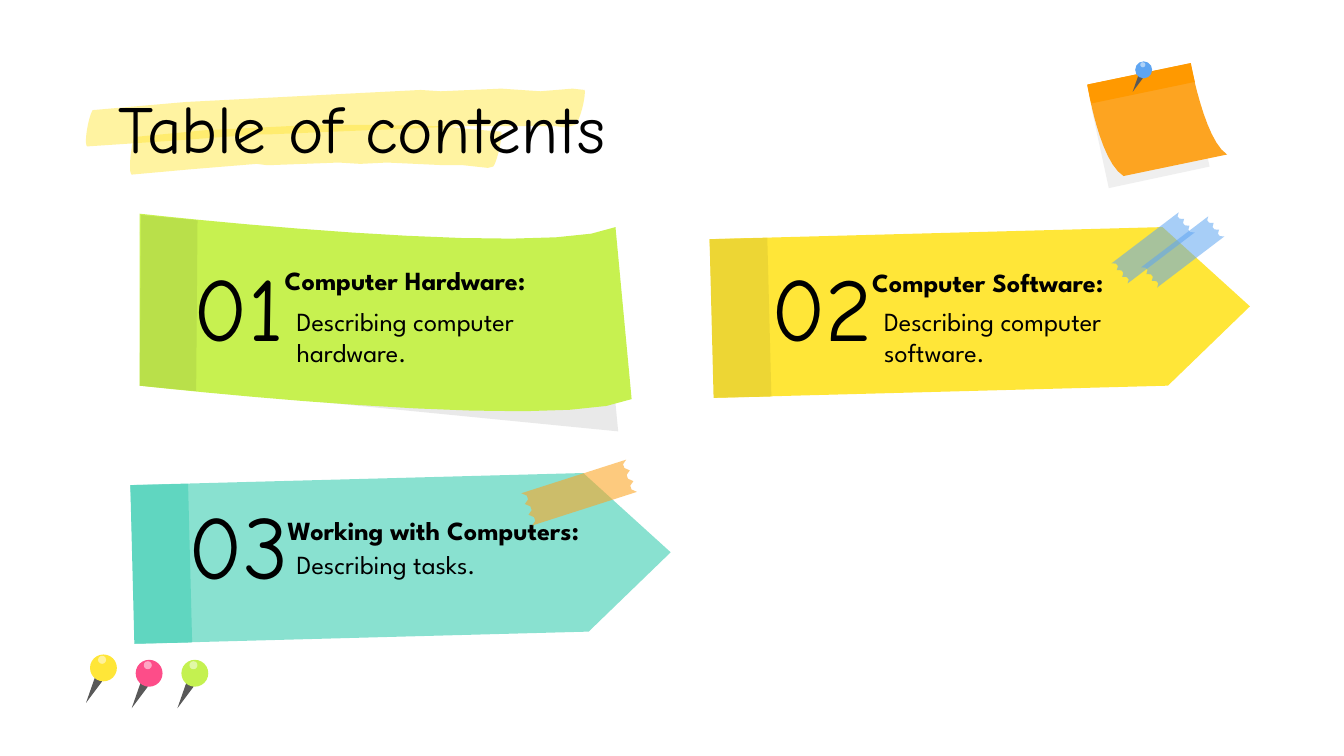
from dataclasses import dataclass

from lxml import etree
from pptx import Presentation
from pptx import util as u
from pptx.dml.color import RGBColor
from pptx.enum import shapes, text
from pptx.oxml.ns import qn


@dataclass(frozen=True)
class Theme:
    hand: str = "Comic Neue"
    sans: str = "League Spartan"
    title: int = 36
    number: int = 48
    body: int = 14
    ink: str = "000000"
    white: str = "FFFFFF"
    needle: str = "595959"
    yellow: str = "FFE638"
    yellow_dark: str = "EDD634"
    teal: str = "89E1D0"
    teal_dark: str = "60D6C0"
    green: str = "C7F150"
    green_dark: str = "B9E04A"
    green_pin: str = "C4F150"
    pink: str = "FD4D89"
    blue: str = "5EA5F2"
    orange: str = "FDA421"
    orange_dark: str = "FF9900"
    shade: str = "D9D9D9"
    shade_light: str = "EFEFEF"


T = Theme()
W = 10
H = W * 9 / 16
TITLE = "Table of contents"

# number, heading, description, then the corner of each of their boxes
CARDS = [
    ("01", "Computer Hardware:", "Describing computer hardware.",
     (1.21, 2.13), (2.02, 1.87), (2.11, 2.17)),
    ("02", "Computer Software:", "Describing computer software.",
     (5.55, 2.13), (6.39, 1.88), (6.48, 2.17)),
    ("03", "Working with Computers:", "Describing tasks.",
     (1.21, 3.9), (2.04, 3.73), (2.11, 3.98)),
]

# Outlines: a pair is a corner, six numbers are a Bezier curve.
ARROW = [(0, 0), (3.37, -0.09), (4.02, 0.5), (3.41, 1.09), (0.04, 1.18)]
ARROW_BAND = [(0, 0), (0.43, -0.01), (0.46, 1.17), (0.03, 1.18)]
ARROWS = [((0.97, 3.61), T.teal, T.teal_dark), ((5.28, 1.78), T.yellow, T.yellow_dark)]

GREEN_NOTE = [
    ([(4.49, 2.07), (1.04, 1.73), (1.15, 2.87), (4.6, 3.21)], T.shade, 56),
    ([(4.58, 1.69), (4.06, 1.93, 1.04, 1.59, 1.04, 1.59), (1.04, 2.87),
      (1.04, 2.87, 4.15, 3.22, 4.7, 2.97)], T.green, 100),
    ([(1.47, 1.64), (1.05, 1.6), (1.04, 2.87), (1.46, 2.91)], T.green_dark, 100),
]
HIGHLIGHTS = [
    [(4.35, 0.67), (4.26, 0.66), (4.02, 0.68), (3.73, 0.66), (3.28, 0.68), (3.13, 0.67),
     (2.54, 0.7), (1.38, 0.76), (0.69, 0.82), (0.66, 0.86, 0.62, 1.08, 0.65, 1.09),
     (1.25, 1.05), (1.94, 1), (2.02, 1), (2.73, 0.97), (3.01, 0.96), (3.43, 0.94),
     (4.14, 0.94), (4.21, 0.95), (4.28, 0.93), (4.32, 0.89, 4.36, 0.71, 4.35, 0.67)],
    [(3.73, 0.98), (3.48, 0.96), (3.31, 0.94), (2.81, 0.93), (2.33, 0.93), (1.52, 0.97),
     (1, 1.02), (0.98, 1.06, 0.95, 1.28, 0.98, 1.3), (1.42, 1.26), (1.91, 1.22),
     (1.99, 1.23), (2.52, 1.21), (2.68, 1.22), (2.88, 1.21), (3.31, 1.23), (3.45, 1.23),
     (3.63, 1.25), (3.67, 1.24), (3.7, 1.2, 3.74, 1.02, 3.73, 0.98)],
]
ORANGE_NOTE = [
    ([(8.87, 0.64), (8.12, 0.8), (8.25, 1.4), (9, 1.24)], T.shade_light, 100),
    ([(8.86, 0.47), (8.09, 0.63), (8.09, 0.63, 8.18, 1.2, 8.36, 1.31), (9.13, 1.15),
      (8.96, 1.04, 8.86, 0.47, 8.86, 0.47)], T.orange, 100),
    ([(8.86, 0.47), (8.09, 0.63), (8.12, 0.77), (8.89, 0.61)], T.orange_dark, 100),
]
# centre of the head, scale, colour
PINS = [((0.77, 4.97), 1, T.yellow), ((8.51, 0.52), 0.63, T.blue),
        ((1.11, 5.01), 1, T.pink), ((1.45, 5.01), 1, T.green_pin)]
# corner, vector across, vector along, colour, opacity
TAPES = [((3.88, 3.67), (0.08, 0.24), (0.78, -0.25), T.orange, 58),
         ((8.27, 1.96), (0.12, 0.15), (0.5, -0.38), T.blue, 54),
         ((8.49, 1.99), (0.12, 0.15), (0.5, -0.38), T.blue, 54)]


def paint(sp, color, opacity=100):
    sp.shadow.inherit = False
    sp.line.fill.background()
    sp.fill.solid()
    sp.fill.fore_color.rgb = RGBColor.from_string(color)
    if opacity < 100:
        clr = sp.element.spPr.find(".//" + qn("a:srgbClr"))
        etree.SubElement(clr, qn("a:alpha")).set("val", str(opacity * 1000))


def flatten(path, steps=12):
    """Turn corners and curves into a list of points."""
    pts = [path[0]]
    for seg in path[1:]:
        if len(seg) == 2:
            pts.append(seg)
            continue
        ctrl = [pts[-1], seg[:2], seg[2:4], seg[4:]]
        for i in range(1, steps + 1):
            t = i / steps
            k = ((1 - t) ** 3, 3 * t * (1 - t) ** 2, 3 * t * t * (1 - t), t ** 3)
            pts.append(tuple(sum(a * c[j] for a, c in zip(k, ctrl)) for j in (0, 1)))
    return pts


def outline(s, path, color, opacity=100, at=(0, 0), scale=1):
    pts = [tuple(u.Inches(o + scale * c) for o, c in zip(at, p)) for p in flatten(path)]
    fb = s.shapes.build_freeform(*pts[0])
    fb.add_line_segments(pts[1:], close=True)
    paint(fb.convert_to_shape(), color, opacity)


def disc(s, x, y, size, color, opacity=100):
    box = [u.Inches(v) for v in (x - size / 2, y - size / 2, size, size)]
    paint(s.shapes.add_shape(shapes.MSO_SHAPE.OVAL, *box), color, opacity)


def pin(s, at, scale, color):
    x, y = at
    outline(s, [(-0.06, 0.06), (-0.13, 0.26), (-0.01, 0.1)], T.needle, at=at, scale=scale)
    disc(s, x, y, 0.2 * scale, color)
    disc(s, x - 0.01 * scale, y - 0.06 * scale, 0.06 * scale, T.white, 50)


def tape(s, at, across, along, color, opacity, notches=3, depth=0.04):
    """Strip whose two short ends are torn into equal notches."""
    def point(a, b):
        return tuple(a * c + b * l for c, l in zip(across, along))

    torn = [(0, 0)]
    for i in range(notches):
        torn += [((i + 0.35) / notches, depth), ((i + 0.7) / notches, depth),
                 ((i + 1) / notches, 0)]
    far = [(1 - a, 1 - b) for a, b in torn]
    outline(s, [point(*p) for p in torn + far], color, opacity, at=at)


def write(sp, words, at, size, *, font=T.sans, pt=T.body, bold=False, spacing=None,
          align=text.PP_ALIGN.LEFT, anchor=text.MSO_ANCHOR.TOP):
    sp.left, sp.top, sp.width, sp.height = (u.Inches(v) for v in (*at, *size))
    tf = sp.text_frame
    tf.word_wrap = True
    tf.auto_size = text.MSO_AUTO_SIZE.NONE
    tf.vertical_anchor = anchor
    tf.margin_left = tf.margin_right = tf.margin_top = tf.margin_bottom = u.Inches(0.1)
    p = tf.paragraphs[0]
    p.alignment = align
    if spacing:
        p.line_spacing = spacing
    r = p.add_run()
    r.text = words
    r.font.name, r.font.size, r.font.bold = font, u.Pt(pt), bold
    r.font.color.rgb = RGBColor.from_string(T.ink)


def main():
    prs = Presentation()
    prs.slide_width, prs.slide_height = u.Inches(W), u.Inches(H)
    s = prs.slides.add_slide(prs.slide_layouts[5])

    for at, color, dark in ARROWS:
        outline(s, ARROW, color, at=at)
        outline(s, ARROW_BAND, dark, at=at)
    for part in GREEN_NOTE:
        outline(s, *part)
    for stroke in HIGHLIGHTS:
        outline(s, stroke, T.yellow, 47)

    title = s.shapes.title
    title.element.getparent().append(title.element)  # above the highlighter
    write(title, TITLE, (0.78, 0.66), (6, 0.63), font=T.hand, pt=T.title, spacing=0.8)
    for number, heading, description, number_at, heading_at, description_at in CARDS:
        for words, at, size, style in (
            (heading, heading_at, (2.6, 0.44), dict(bold=True)),
            (description, description_at, (2.6, 0.63), {}),
            (number, number_at, (1.13, 0.44),
             dict(font=T.hand, pt=T.number, spacing=0.8, align=text.PP_ALIGN.CENTER,
                  anchor=text.MSO_ANCHOR.MIDDLE)),
        ):
            write(s.shapes.add_textbox(0, 0, 0, 0), words, at, size, **style)

    for part in ORANGE_NOTE:
        outline(s, *part)
    for at, scale, color in PINS:
        pin(s, at, scale, color)
    for strip in TAPES:
        tape(s, *strip)
    prs.save("out.pptx")


if __name__ == "__main__":
    main()
